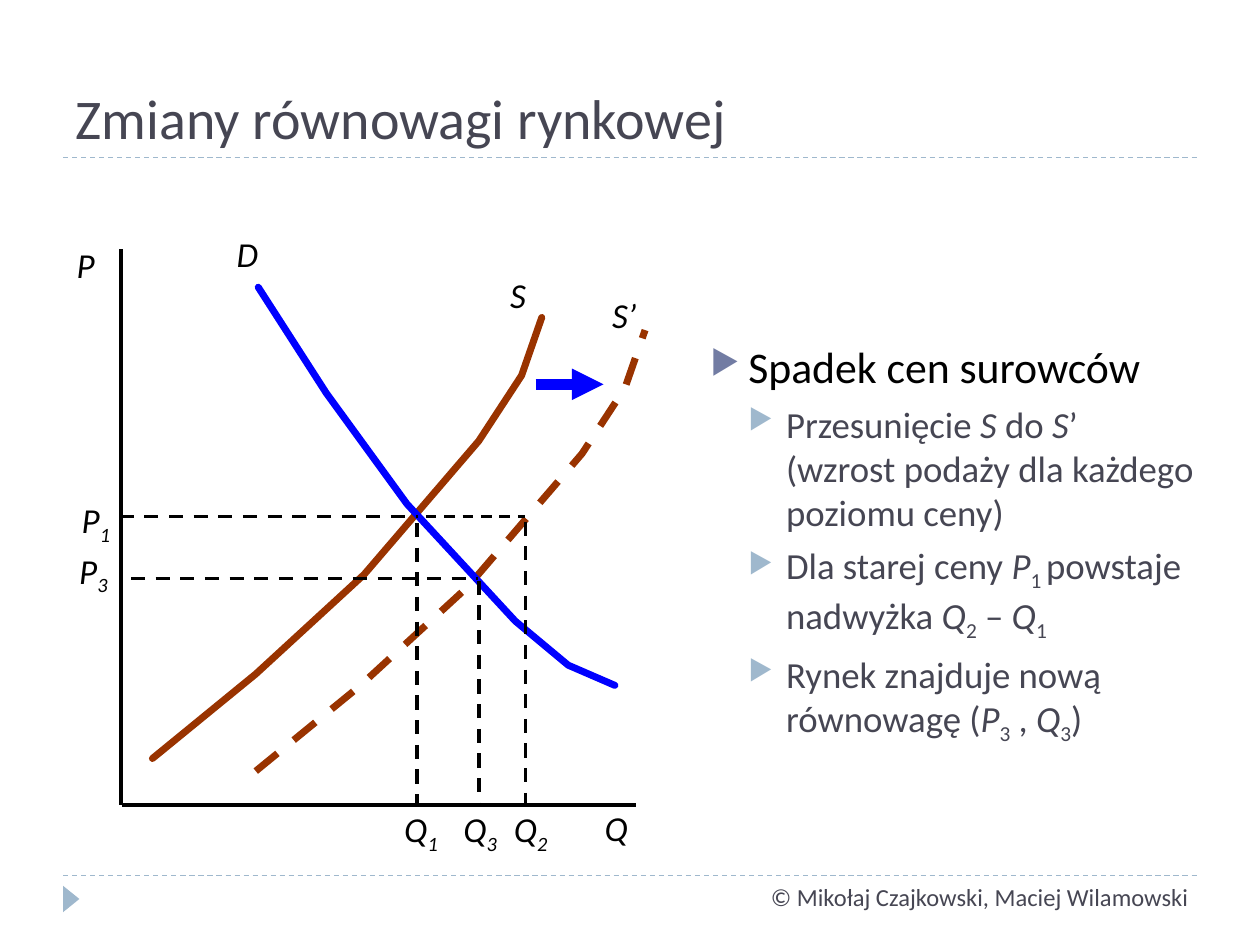
"""Build a slide on changes of market equilibrium with a supply and demand diagram."""
from typing import NamedTuple

from lxml import etree
from pptx import Presentation
from pptx.dml.color import RGBColor
from pptx.enum.dml import MSO_LINE
from pptx.enum.shapes import MSO_CONNECTOR, MSO_SHAPE
from pptx.enum.text import MSO_ANCHOR, PP_ALIGN
from pptx.oxml.ns import qn
from pptx.util import Inches, Pt

DASH = MSO_LINE.DASH
STRAIGHT = MSO_CONNECTOR.STRAIGHT
TRIANGLE = MSO_SHAPE.ISOSCELES_TRIANGLE
BOTTOM = MSO_ANCHOR.BOTTOM
LEFT = PP_ALIGN.LEFT

BLACK = RGBColor(0x00, 0x00, 0x00)
BLUE = RGBColor(0x00, 0x00, 0xFF)
BROWN = RGBColor(0x99, 0x33, 0x00)
SLATE = RGBColor(0x46, 0x46, 0x53)
PALE_BLUE = RGBColor(0x9F, 0xB8, 0xCD)
VIOLET = RGBColor(0x72, 0x7C, 0xA3)
FONT = "Calibri"


class Span(NamedTuple):
    text: str
    italic: bool = False
    subscript: bool = False


class Line(NamedTuple):
    start: tuple[float, float]
    end: tuple[float, float]
    color: RGBColor = BLACK
    width: float = 2
    dashed: bool = False
    arrow: bool = False


class Curve(NamedTuple):
    points: list[tuple[float, float]]
    color: RGBColor
    dashed: bool = False


class Label(NamedTuple):
    left: float
    top: float
    width: float
    letter: str
    index: str = ""


class Bullet(NamedTuple):
    spans: list[Span]
    size: float = 21
    color: RGBColor = SLATE
    marker: RGBColor = PALE_BLUE
    level: int = 1
    space_before: float = 5


SUPPLY = [(1.21, 6.02), (2.03, 5.35), (2.89, 4.56), (3.8, 3.5), (4.14, 2.98), (4.3, 2.52)]
DEMAND = [(2.05, 2.28), (2.59, 3.12), (3.23, 4), (4.09, 4.93), (4.51, 5.28), (4.88, 5.44)]
SHIFT = (0.82, 0.1)

CURVES = [
    Curve([(x + SHIFT[0], y + SHIFT[1]) for x, y in SUPPLY], BROWN, dashed=True),
    Curve(SUPPLY, BROWN),
    Curve(DEMAND, BLUE),
]
LINES = [
    Line((0.5, 6.95), (9.5, 6.95), PALE_BLUE, 0.75, dashed=True),
    Line((0.5, 1.25), (9.5, 1.25), PALE_BLUE, 0.75, dashed=True),
    Line((0.96, 1.98), (0.96, 6.39)),
    Line((0.97, 6.39), (5.05, 6.39)),
    Line((1.04, 4.59), (3.79, 4.59), dashed=True),
    Line((3.8, 4.61), (3.8, 6.38), dashed=True),
    Line((3.31, 4.15), (3.31, 6.39), dashed=True),
    Line((0.95, 4.1), (3.32, 4.1), dashed=True),
    Line((4.25, 3.05), (4.79, 3.05), BLUE, 6, arrow=True),
    Line((4.17, 4.14), (4.17, 6.46), dashed=True),
    Line((3.38, 4.1), (4.17, 4.1), width=1.5, dashed=True),
]
LABELS = [
    Label(4.76, 2.28, 0.39, "S’"),
    Label(0.51, 1.88, 0.35, "P"),
    Label(4.7, 6.35, 0.39, "Q"),
    Label(3.95, 2.12, 0.33, "S"),
    Label(1.78, 1.8, 0.37, "D"),
    Label(0.53, 4.31, 0.45, "P", "3"),
    Label(0.55, 3.91, 0.45, "P", "1"),
    Label(3.11, 6.36, 0.48, "Q", "1"),
    Label(3.58, 6.36, 0.48, "Q", "3"),
    Label(3.98, 6.36, 0.48, "Q", "2"),
]
BULLETS = [
    Bullet([Span("Spadek cen surowców")], 25, BLACK, VIOLET, 0, 6),
    Bullet([Span("Przesunięcie "), Span("S ", italic=True), Span("do "), Span("S", italic=True),
            Span("’"), Span("\n"), Span("(wzrost podaży dla każdego poziomu ceny)")]),
    Bullet([Span("Dla starej ceny "), Span("P", italic=True), Span("1 ", subscript=True),
            Span("powstaje nadwyżka "), Span("Q", italic=True), Span("2", subscript=True),
            Span(" – "), Span("Q", italic=True), Span("1", subscript=True)]),
    Bullet([Span("Rynek znajduje nową równowagę ("), Span("P", italic=True),
            Span("3", subscript=True), Span(" , "), Span("Q", italic=True),
            Span("3", subscript=True), Span(")")]),
]


def add_spans(para, spans: list[Span], size: float, color: RGBColor) -> None:
    for span in spans:
        if span.text == "\n":
            para.add_line_break()
            continue
        run = para.add_run()
        run.text = span.text
        run.font.name = FONT
        run.font.size = Pt(size)
        run.font.color.rgb = color
        run.font.italic = span.italic
        if span.subscript:
            run.font._element.set("baseline", "-25000")


def add_box(page, left: float, top: float, width: float, height: float, wrap: bool):
    box = page.shapes.add_textbox(Inches(left), Inches(top), Inches(width), Inches(height))
    box.text_frame.word_wrap = wrap
    return box.text_frame


def style_line(line, color: RGBColor, width: float, dashed: bool) -> None:
    line.color.rgb = color
    line.width = Pt(width)
    if dashed:
        line.dash_style = DASH


def draw_line(page, item: Line) -> None:
    ends = [Inches(value) for value in (*item.start, *item.end)]
    connector = page.shapes.add_connector(STRAIGHT, *ends)
    style_line(connector.line, item.color, item.width, item.dashed)
    properties = connector._element.spPr
    if item.arrow:
        etree.SubElement(properties.find(qn("a:ln")), qn("a:tailEnd"), type="triangle")
    etree.SubElement(properties, qn("a:effectLst"))


def draw_curve(page, curve: Curve) -> None:
    points = [(Inches(x), Inches(y)) for x, y in curve.points]
    builder = page.shapes.build_freeform(*points[0])
    builder.add_line_segments(points[1:], close=False)
    shape = builder.convert_to_shape()
    shape.shadow.inherit = False
    shape.fill.background()
    style_line(shape.line, curve.color, 4, curve.dashed)
    if not curve.dashed:
        shape._element.spPr.find(qn("a:ln")).set("cap", "rnd")


def draw_label(page, label: Label) -> None:
    frame = add_box(page, label.left, label.top, label.width, 0.43, wrap=False)
    spans = [Span(label.letter, italic=True)]
    if label.index:
        spans.append(Span(label.index, italic=True, subscript=True))
    add_spans(frame.paragraphs[0], spans, 20, BLACK)


def draw_bullet(para, bullet: Bullet) -> None:
    para.level = bullet.level
    para.space_before = Pt(bullet.space_before)
    properties = para._p.get_or_add_pPr()
    properties.set("marL", str(Inches(0.3 * (bullet.level + 1))))
    properties.set("indent", str(Inches(-0.3)))
    marker = etree.SubElement(properties, qn("a:buClr"))
    etree.SubElement(marker, qn("a:srgbClr"), val=str(bullet.marker))
    etree.SubElement(properties, qn("a:buSzPct"), val="76000")
    etree.SubElement(properties, qn("a:buChar"), char="▶")
    add_spans(para, bullet.spans, bullet.size, bullet.color)


def main() -> None:
    deck = Presentation()
    deck.slide_width, deck.slide_height = Inches(10), Inches(7.5)
    page = deck.slides.add_slide(deck.slide_layouts[5])

    title = page.shapes.title
    title.left, title.top, title.width, title.height = map(Inches, (0.5, 0.17, 9, 1.08))
    title.text_frame.vertical_anchor = BOTTOM
    heading = title.text_frame.paragraphs[0]
    heading.alignment = LEFT
    add_spans(heading, [Span("Zmiany równowagi rynkowej")], 32, SLATE)

    corner = page.shapes.add_shape(TRIANGLE, *map(Inches, (0.46, 7.07, 0.21, 0.13)))
    corner.rotation = 90
    corner.shadow.inherit = False
    corner.fill.solid()
    corner.fill.fore_color.rgb = PALE_BLUE
    corner.line.fill.background()

    footer = add_box(page, 6.02, 6.95, 3.54, 0.34, wrap=False)
    add_spans(footer.paragraphs[0], [Span("© Mikołaj Czajkowski, Maciej Wilamowski")], 14, SLATE)

    for curve in CURVES:
        draw_curve(page, curve)
    for item in LINES:
        draw_line(page, item)
    for label in LABELS:
        draw_label(page, label)

    body = add_box(page, 5.54, 2.65, 4.15, 3.99, wrap=True)
    for number, bullet in enumerate(BULLETS):
        draw_bullet(body.add_paragraph() if number else body.paragraphs[0], bullet)

    deck.save("out.pptx")


if __name__ == "__main__":
    main()
